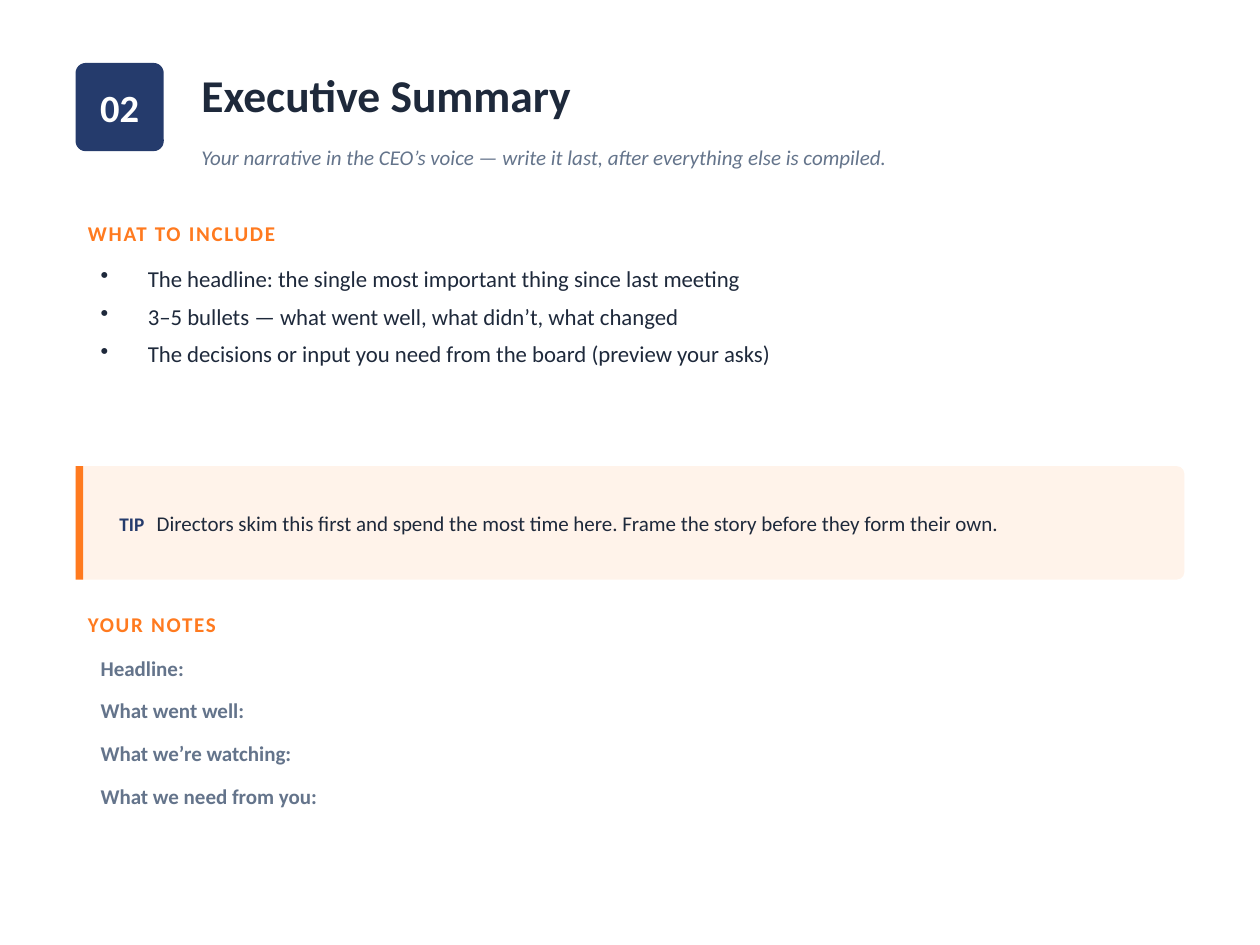
from dataclasses import dataclass

from lxml import etree
from pptx import Presentation
from pptx.dml.color import RGBColor
from pptx.enum.shapes import MSO_SHAPE
from pptx.enum.text import MSO_ANCHOR, PP_ALIGN
from pptx.oxml.ns import qn
from pptx.util import Pt


@dataclass(frozen=True)
class Theme:
    font: str = "Calibri"
    navy: str = "253B6C"
    ink: str = "1E293B"
    muted: str = "64748B"
    accent: str = "FF7A1F"
    tint: str = "FFF3EA"
    white: str = "FFFFFF"
    title_size: int = 26
    number_size: int = 22
    bullet_size: int = 13
    body_size: int = 12
    label_size: int = 11


THEME = Theme()

NUMBER = "02"
TITLE = "Executive Summary"
SUBTITLE = "Your narrative in the CEO’s voice — write it last, after everything else is compiled."
INCLUDE_HEADING = "WHAT TO INCLUDE"
INCLUDE_ITEMS = [
    "The headline: the single most important thing since last meeting",
    "3–5 bullets — what went well, what didn’t, what changed",
    "The decisions or input you need from the board (preview your asks)",
]
TIP_LABEL = "TIP"
TIP_TEXT = "Directors skim this first and spend the most time here. Frame the story before they form their own."
NOTES_HEADING = "YOUR NOTES"
NOTES_PROMPTS = ["Headline:", "What went well:", "What we’re watching:", "What we need from you:"]

SLIDE_W, SLIDE_H = 720, 540
MARGIN = 43.2
CONTENT_W = SLIDE_W - 2 * MARGIN
RIGHT = SLIDE_W - MARGIN
HEADER_TOP, BADGE = 36, 50.4
TITLE_LEFT, TITLE_H = 108, 36
LIST_LEFT = MARGIN + 7.2
HEADING_H, HEADING_STEP = 21.6, 25.2
INCLUDE_TOP, INCLUDE_H = 122.4, 108
TIP_TOP, TIP_H, TIP_BAR_W = 266.4, 64.8, 4.32
TIP_LEFT, TIP_TEXT_W, TIP_TAB = 61.2, 604.8, 21.3
NOTES_TOP, NOTES_H = 345.6, 136.8
CORNER = 5.76 / BADGE
TIP_CORNER = 4.32 / TIP_H
BULLET_INDENT = 27


def add_block(slide, preset, left, top, width, height, color, corner=None):
    block = slide.shapes.add_shape(preset, Pt(left), Pt(top), Pt(width), Pt(height))
    if corner is not None:
        block.adjustments[0] = corner
    block.shadow.inherit = False
    block.fill.solid()
    block.fill.fore_color.rgb = RGBColor.from_string(color)
    block.line.fill.background()


def add_text_frame(slide, left, top, width, height, anchor=MSO_ANCHOR.MIDDLE):
    frame = slide.shapes.add_textbox(Pt(left), Pt(top), Pt(width), Pt(height)).text_frame
    frame.word_wrap = True
    frame.vertical_anchor = anchor
    return frame


def add_run(paragraph, text, size, color, bold=False, italic=False, spacing=None):
    run = paragraph.add_run()
    run.text = text
    font = run.font
    font.name, font.size, font.bold, font.italic = THEME.font, Pt(size), bold, italic
    font.color.rgb = RGBColor.from_string(color)
    if spacing is not None:
        run._r.get_or_add_rPr().set("spc", str(spacing * 100))


def add_bullet(paragraph):
    properties = paragraph._p.get_or_add_pPr()
    properties.set("marL", str(Pt(BULLET_INDENT)))
    properties.set("indent", str(-Pt(BULLET_INDENT)))
    etree.SubElement(properties, qn("a:buChar")).set("char", "•")


def add_tab(paragraph, position):
    stops = etree.SubElement(paragraph._p.get_or_add_pPr(), qn("a:tabLst"))
    stop = etree.SubElement(stops, qn("a:tab"))
    stop.set("pos", str(Pt(position)))
    stop.set("algn", "l")


def add_section(slide, heading, items, top, height, size, color, gap, bulleted=False, bold=False):
    heading_frame = add_text_frame(slide, MARGIN, top, CONTENT_W, HEADING_H)
    add_run(heading_frame.paragraphs[0], heading, THEME.body_size, THEME.accent, bold=True, spacing=1)
    items_frame = add_text_frame(
        slide, LIST_LEFT, top + HEADING_STEP, RIGHT - LIST_LEFT, height, MSO_ANCHOR.TOP
    )
    for index, item in enumerate(items):
        paragraph = items_frame.add_paragraph() if index else items_frame.paragraphs[0]
        if bulleted:
            add_bullet(paragraph)
        paragraph.space_after = Pt(gap)
        add_run(paragraph, item, size, color, bold=bold)


def add_header(slide):
    add_block(slide, MSO_SHAPE.ROUNDED_RECTANGLE, MARGIN, HEADER_TOP, BADGE, BADGE, THEME.navy, CORNER)
    number = add_text_frame(slide, MARGIN, HEADER_TOP, BADGE, BADGE).paragraphs[0]
    number.alignment = PP_ALIGN.CENTER
    add_run(number, NUMBER, THEME.number_size, THEME.white, bold=True)
    title_w = RIGHT - TITLE_LEFT
    title = add_text_frame(slide, TITLE_LEFT, HEADER_TOP, title_w, TITLE_H).paragraphs[0]
    add_run(title, TITLE, THEME.title_size, THEME.ink, bold=True)
    subtitle = add_text_frame(slide, TITLE_LEFT, HEADER_TOP + TITLE_H, title_w, TITLE_H).paragraphs[0]
    add_run(subtitle, SUBTITLE, THEME.body_size, THEME.muted, italic=True)


def add_tip(slide):
    add_block(slide, MSO_SHAPE.ROUNDED_RECTANGLE, MARGIN, TIP_TOP, CONTENT_W, TIP_H, THEME.tint, TIP_CORNER)
    add_block(slide, MSO_SHAPE.RECTANGLE, MARGIN, TIP_TOP, TIP_BAR_W, TIP_H, THEME.accent)
    tip = add_text_frame(slide, TIP_LEFT, TIP_TOP, TIP_TEXT_W, TIP_H).paragraphs[0]
    add_tab(tip, TIP_TAB)
    add_run(tip, TIP_LABEL + "\t", THEME.label_size, THEME.navy, bold=True)
    add_run(tip, TIP_TEXT, THEME.body_size, THEME.ink)


def main():
    deck = Presentation()
    deck.slide_width, deck.slide_height = Pt(SLIDE_W), Pt(SLIDE_H)
    slide = deck.slides.add_slide(deck.slide_layouts[6])
    slide.background.fill.solid()
    slide.background.fill.fore_color.rgb = RGBColor.from_string(THEME.white)
    add_header(slide)
    add_section(slide, INCLUDE_HEADING, INCLUDE_ITEMS, INCLUDE_TOP, INCLUDE_H,
                THEME.bullet_size, THEME.ink, gap=6, bulleted=True)
    add_tip(slide)
    add_section(slide, NOTES_HEADING, NOTES_PROMPTS, NOTES_TOP, NOTES_H,
                THEME.body_size, THEME.muted, gap=10, bold=True)
    deck.save("out.pptx")


if __name__ == "__main__":
    main()
